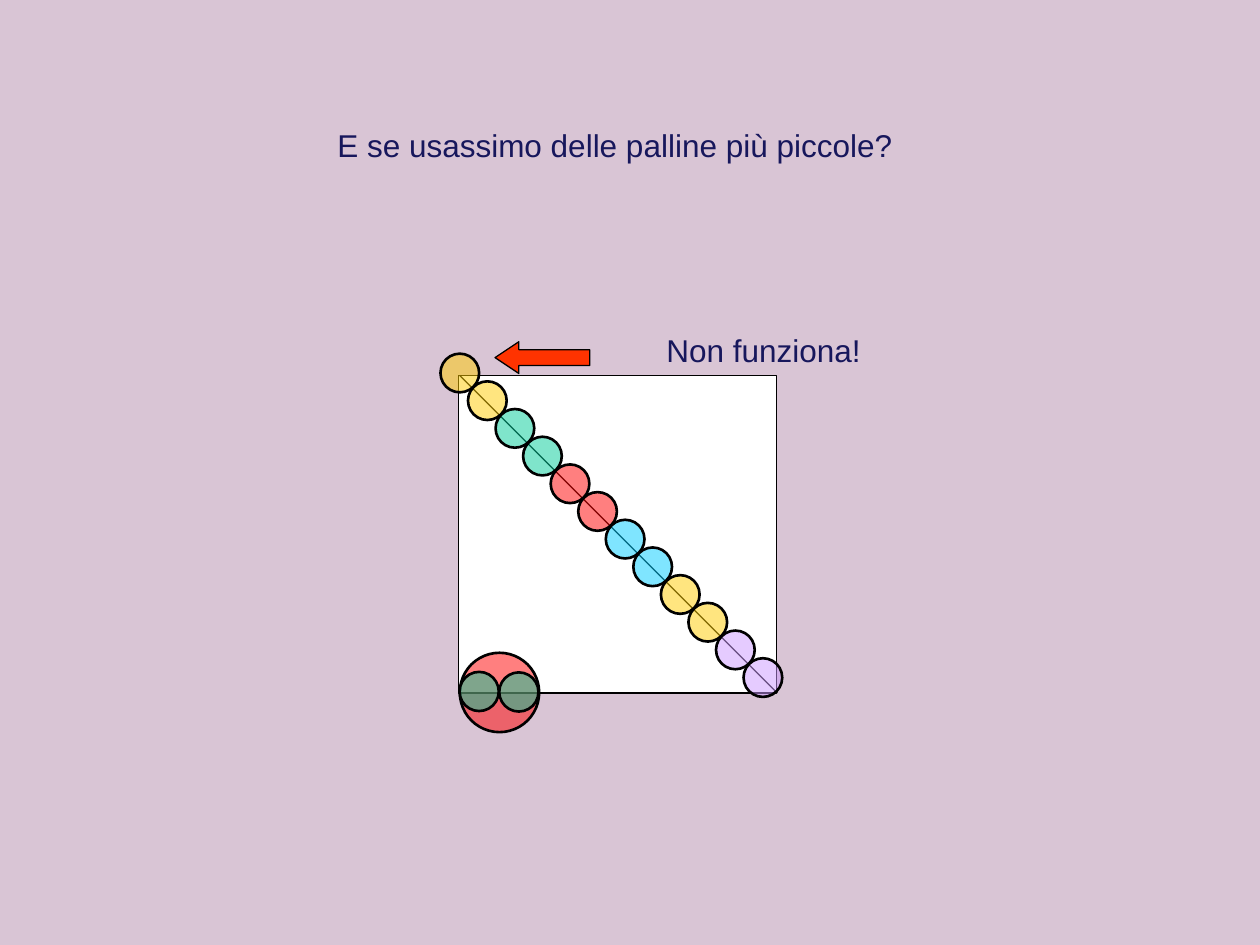
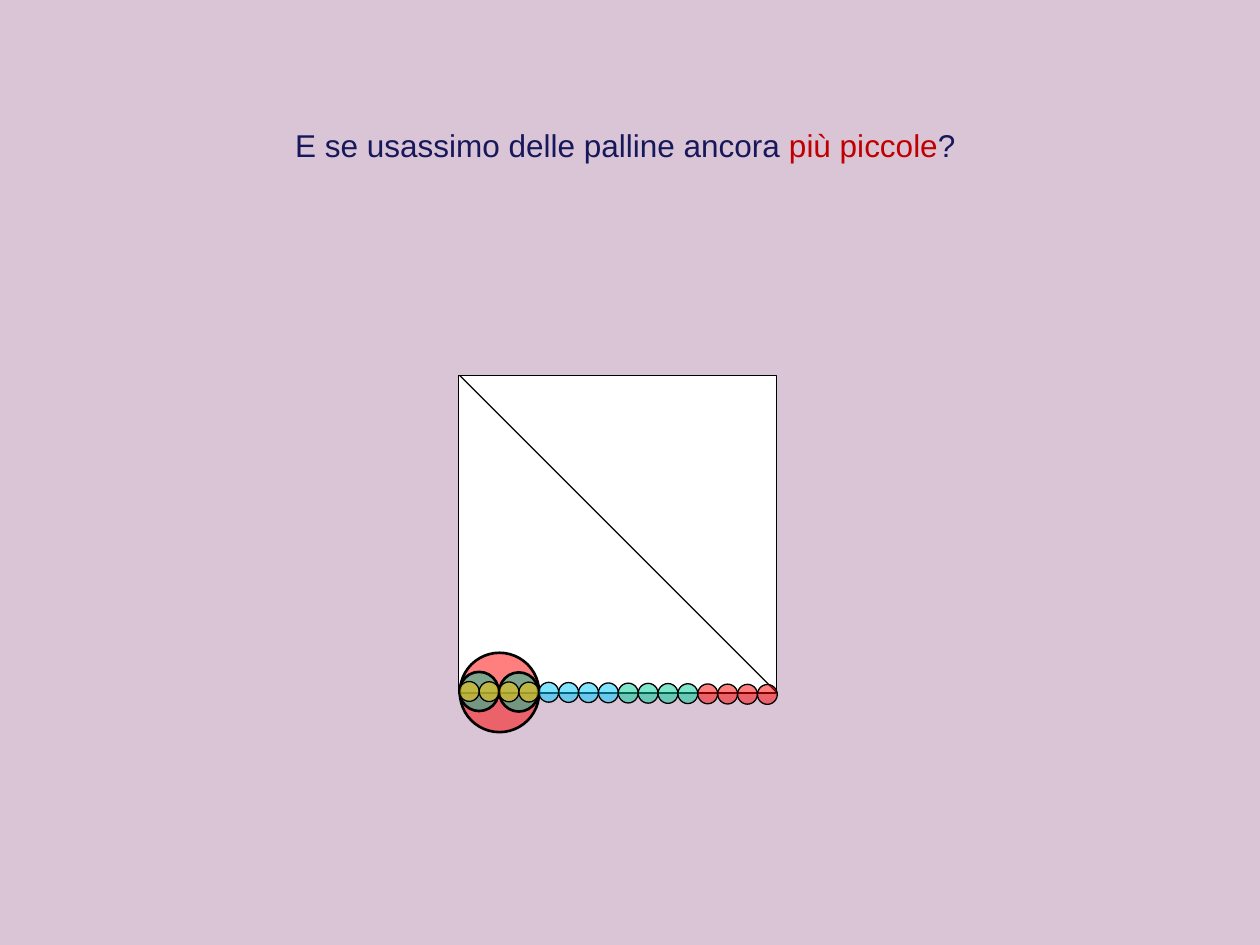
from pptx import Presentation
from pptx.dml.color import RGBColor
from pptx.enum.shapes import MSO_CONNECTOR, MSO_SHAPE
from pptx.enum.text import MSO_ANCHOR, PP_ALIGN
from pptx.oxml.ns import qn
from pptx.util import Cm, Pt
from lxml.etree import SubElement

MAUVE = RGBColor(0xD9, 0xC5, 0xD5)
NAVY = RGBColor(0x17, 0x17, 0x5C)
DARK_RED = RGBColor(0xC0, 0x00, 0x00)
ORANGE = RGBColor(0xFF, 0x33, 0x00)
BLACK = RGBColor(0x00, 0x00, 0x00)
WHITE = RGBColor(0xFF, 0xFF, 0xFF)
YELLOW = RGBColor(0xFF, 0xCC, 0x00)
GREEN = RGBColor(0x00, 0xCC, 0x99)
RED = RGBColor(0xFF, 0x00, 0x00)
CYAN = RGBColor(0x00, 0xCC, 0xFF)
LILAC = RGBColor(0xCC, 0x99, 0xFF)

LEFT, TOP, SIDE = 9.25, 7.57, 6.4  # the square, in cm
BIG, SMALL, TINY = 1.6, 0.79, 0.4  # ball diameters, in cm


def add_outlined(slide, kind, box, fill, line_width=0.75, opacity=100):
    """Add a preset shape with a black outline; box is left, top, width, height in cm."""
    shape = slide.shapes.add_shape(kind, *map(Cm, box))
    shape.shadow.inherit = False
    shape.fill.solid()
    shape.fill.fore_color.rgb = fill
    shape.line.color.rgb = BLACK
    shape.line.width = Pt(line_width)
    if opacity < 100:
        color = shape.fill._xPr.find(qn("a:solidFill"))[0]
        SubElement(color, qn("a:alpha")).set("val", str(opacity * 1000))
    return shape


def add_caption(slide, box, pieces):
    """Add one centred line made of (text, colour) pieces."""
    frame = slide.shapes.add_textbox(*map(Cm, box)).text_frame
    frame.word_wrap = True
    frame.vertical_anchor = MSO_ANCHOR.MIDDLE
    line = frame.paragraphs[0]
    line.alignment = PP_ALIGN.CENTER
    line.font.name = "Arial"
    line.font.size = Pt(18)
    for text, color in pieces:
        run = line.add_run()
        run.text = text
        run.font.color.rgb = color


prs = Presentation()
prs.slide_width, prs.slide_height = Cm(25.4), Cm(19.05)

# Each row of balls: colours, balls per colour, first and last centre, diameter, outline
diagonal_row = ([YELLOW, GREEN, RED, CYAN, YELLOW, LILAC], 2,
                (9.27, 7.52), (15.38, 13.66), 0.78, 1.5)
base_row = ([YELLOW, CYAN, GREEN, RED], 4,
            (9.46, 13.94), (15.47, 14.0), TINY, 0.75)

questions = [
    ((1.7, 2.41, 21.39, 1.02),
     [("E se usassimo delle palline più piccole?", NAVY)], diagonal_row),
    ((0.64, 2.41, 23.93, 1.02),
     [("E se usassimo delle palline ancora ", NAVY), ("più piccole", DARK_RED),
      ("?", NAVY)], base_row),
]

for question_box, question, row in questions:
    slide = prs.slides.add_slide(prs.slide_layouts[6])
    slide.background.fill.solid()
    slide.background.fill.fore_color.rgb = MAUVE
    add_caption(slide, question_box, question)

    # Square with its diagonal
    add_outlined(slide, MSO_SHAPE.RECTANGLE, (LEFT, TOP, SIDE, SIDE), WHITE)
    diagonal = slide.shapes.add_connector(
        MSO_CONNECTOR.STRAIGHT, Cm(LEFT + 0.02), Cm(TOP),
        Cm(LEFT + 0.02 + SIDE), Cm(TOP + SIDE))
    diagonal.line.color.rgb = BLACK
    diagonal.line.width = Pt(0.75)
    SubElement(diagonal._element.spPr, qn("a:effectLst"))

    # Big ball holding two small ones, then the row of balls
    balls = [(10.07, 13.96, BIG, RED, 1.5),
             (10.46, 13.95, SMALL, GREEN, 1.5),
             (9.66, 13.94, SMALL, GREEN, 1.5)]
    colors, repeats, (x0, y0), (x1, y1), diameter, outline = row
    count = len(colors) * repeats
    for i in range(count):
        t = i / (count - 1)
        balls.append((x0 + (x1 - x0) * t, y0 + (y1 - y0) * t,
                      diameter, colors[i // repeats], outline))
    for x, y, size, color, width in balls:
        add_outlined(slide, MSO_SHAPE.OVAL, (x - size / 2, y - size / 2, size, size),
                     color, width, opacity=50)

# Verdict on the first attempt
first_attempt = prs.slides[0]
arrow = add_outlined(first_attempt, MSO_SHAPE.LEFT_ARROW, (9.98, 6.89, 1.91, 0.64), ORANGE)
arrow.adjustments[0], arrow.adjustments[1] = 0.5, 0.75
add_caption(first_attempt, (12.12, 6.55, 6.55, 1.02), [("Non funziona!", NAVY)])

prs.save("out.pptx")
